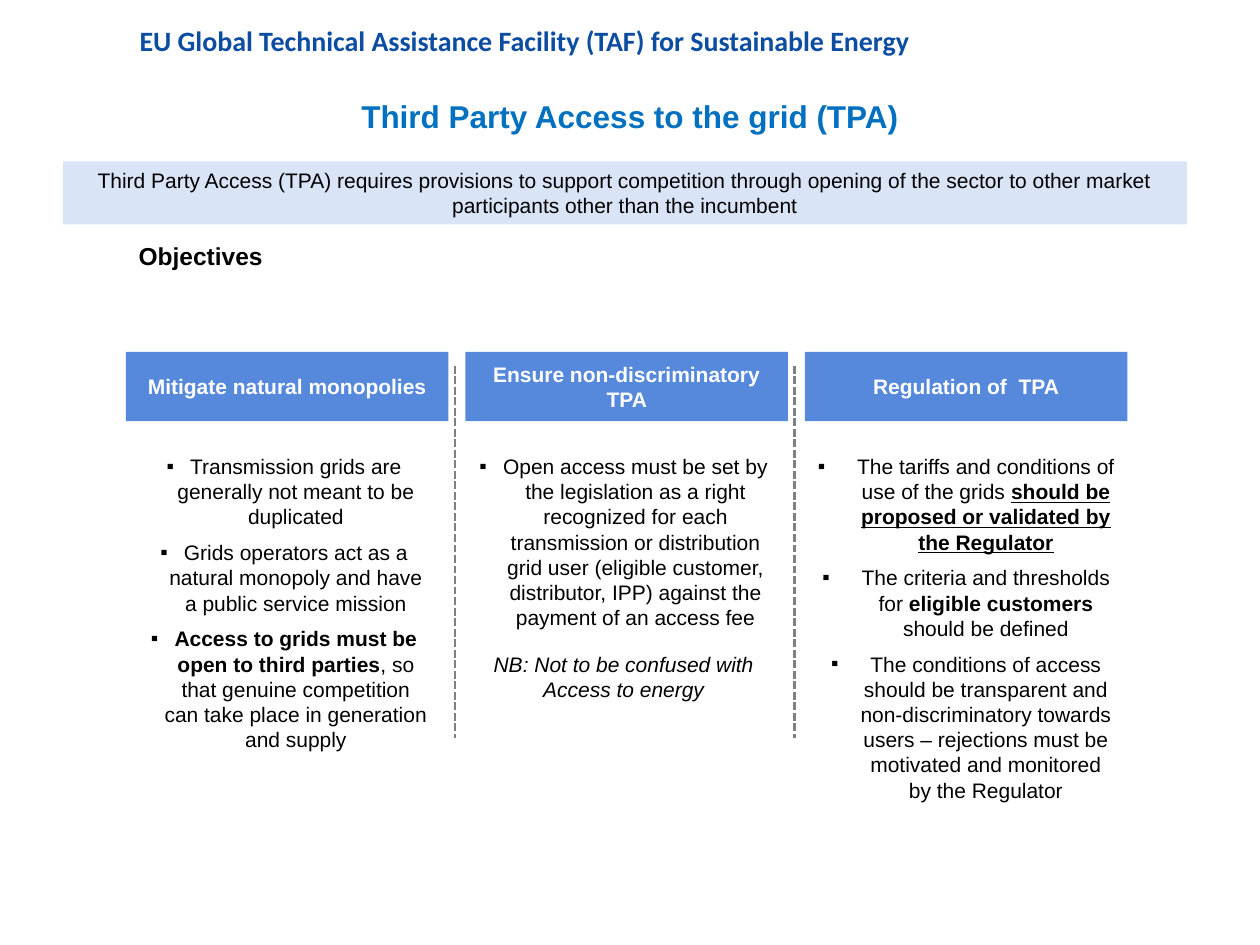
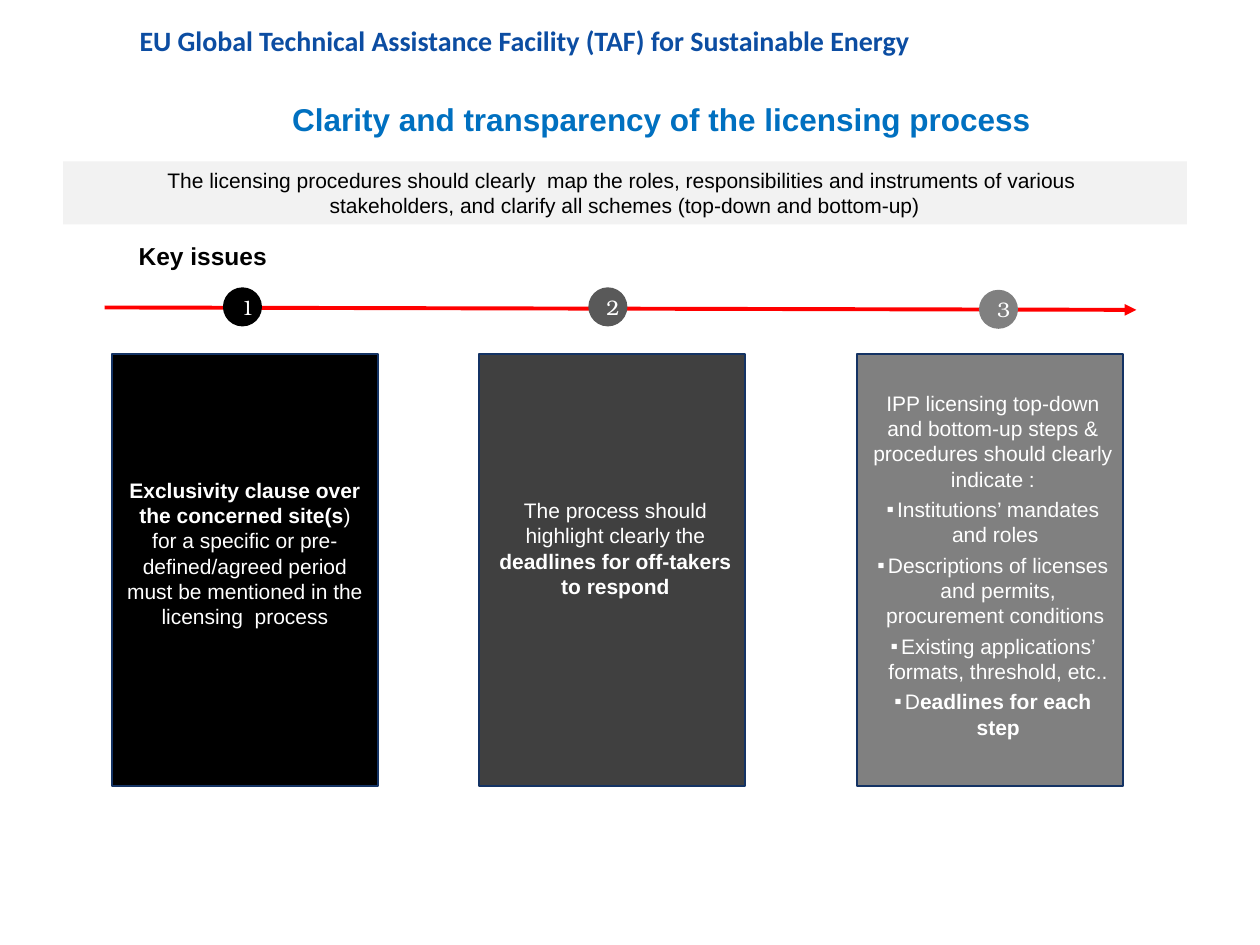
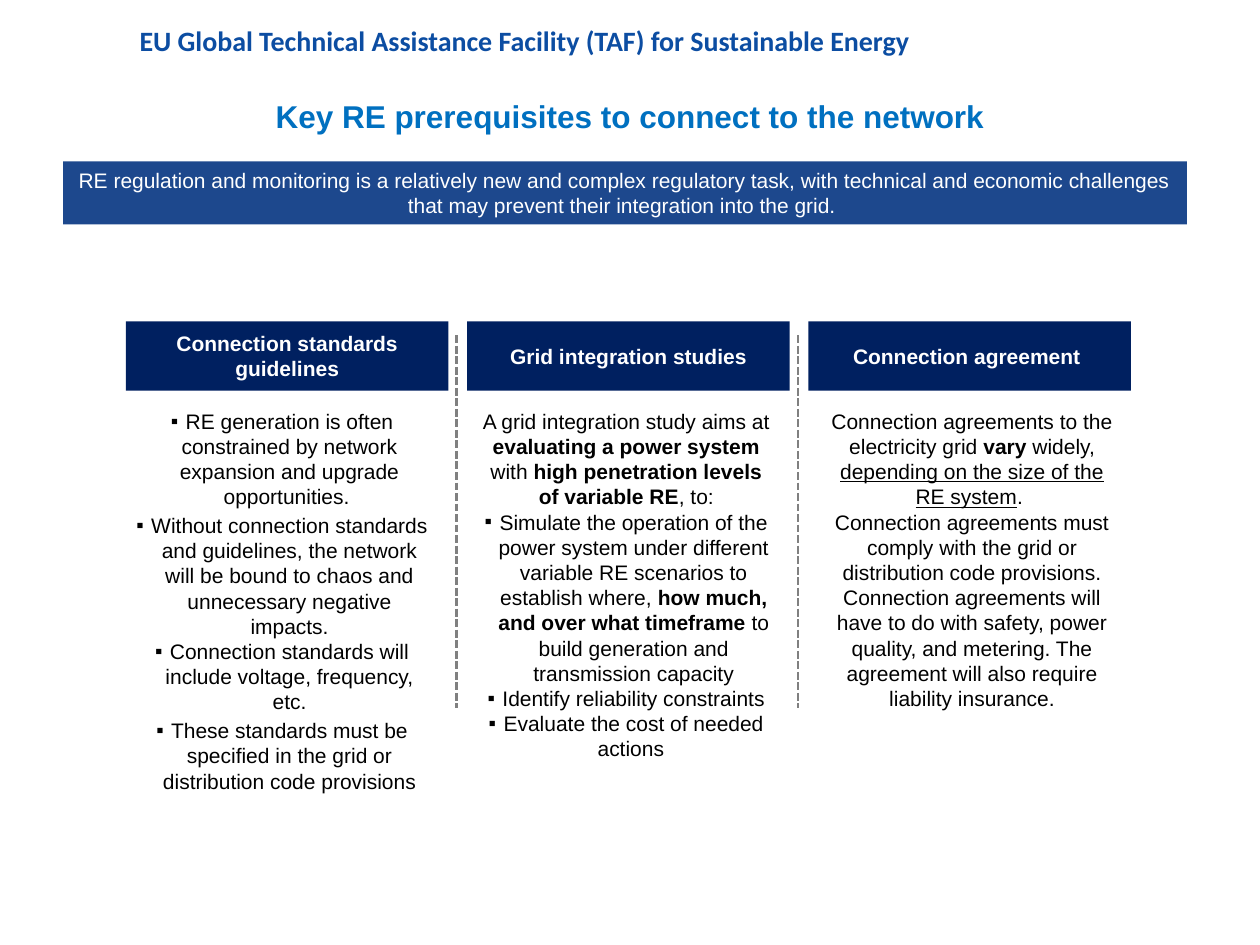
from dataclasses import dataclass
from typing import NamedTuple

from lxml.etree import SubElement
from pptx import Presentation
from pptx.dml.color import RGBColor
from pptx.enum.dml import MSO_LINE_DASH_STYLE as Dash
from pptx.enum.shapes import MSO_CONNECTOR, MSO_SHAPE
from pptx.enum.text import MSO_ANCHOR, MSO_AUTO_SIZE, PP_ALIGN
from pptx.oxml.ns import qn
from pptx.util import Pt

BLACK = RGBColor(0x00, 0x00, 0x00)
WHITE = RGBColor(0xFF, 0xFF, 0xFF)
RED = RGBColor(0xFF, 0x00, 0x00)
HEADER_BLUE = RGBColor(0x0C, 0x4D, 0xA2)
TITLE_BLUE = RGBColor(0x00, 0x70, 0xC0)
PALE_BLUE = RGBColor(0xD9, 0xE4, 0xF7)
MID_BLUE = RGBColor(0x56, 0x89, 0xDC)
BAND_BLUE = RGBColor(0x1D, 0x48, 0x8D)
NAVY = RGBColor(0x00, 0x20, 0x60)
OUTLINE_BLUE = RGBColor(0x14, 0x33, 0x64)
PALE_GRAY = RGBColor(0xF2, 0xF2, 0xF2)
GRAY = RGBColor(0x80, 0x80, 0x80)
DARK_GRAY = RGBColor(0x59, 0x59, 0x59)
CHARCOAL = RGBColor(0x40, 0x40, 0x40)

COMPARISON_LAYOUT = 4
HEADING_INDEX = 1
LIST_INDEXES = (2, 3, 4)
HEADER_TEXT = "EU Global Technical Assistance Facility (TAF) for Sustainable Energy"


class Box(NamedTuple):
    left: float
    top: float
    width: float
    height: float


class Run(NamedTuple):
    text: str
    format: dict = {}


class Style(NamedTuple):
    color: RGBColor = BLACK
    size: float = 12
    bold: bool = False
    name: str = "Arial"
    alignment: PP_ALIGN = PP_ALIGN.CENTER
    anchor: MSO_ANCHOR = MSO_ANCHOR.TOP


@dataclass
class Item:
    runs: tuple
    hanging: float = 0
    after: float = 0
    before: float = 0
    margin: float = 0


@dataclass
class Column:
    heading: str
    left: float
    width: float
    items: list


@dataclass
class Panel:
    number: str
    fill: RGBColor
    left: float
    circle_fill: RGBColor
    circle_left: float
    circle_top: float
    text_box: Box
    items: list


BODY = Style()
WHITE_BODY = Style(color=WHITE)
TITLE = Style(TITLE_BLUE, 18, True)
HEADING = Style(size=14, bold=True, alignment=PP_ALIGN.LEFT)
HEADER = Style(HEADER_BLUE, 16, True, "Calibri", PP_ALIGN.LEFT)
COLUMN_HEADING = Style(WHITE, bold=True, anchor=MSO_ANCHOR.MIDDLE)
NUMBER = Style(WHITE, name="TeX Gyre Bonum", anchor=MSO_ANCHOR.MIDDLE)

TITLE_BOX = Box(0, 52, 720, 29)
HEADER_BOX = Box(72.7, 10, 623.5, 24.5)
BAND_BOX = Box(36, 92.2, 642.2, 36)
HEADING_BOX = Box(72, 134.4, 126, 24.5)


def bold(text: str) -> Run:
    return Run(text, {"bold": True})


def item(*parts, **spacing) -> Item:
    return Item(tuple(Run(part) if isinstance(part, str) else part for part in parts), **spacing)


def bullets(hanging: float, after: float, *rows) -> list:
    return [item(*row, hanging=hanging, after=after) for row in rows]


def points(box: Box) -> tuple:
    return tuple(Pt(length) for length in box)


def set_bullet(paragraph, hanging: float, margin: float) -> None:
    properties = paragraph._p.get_or_add_pPr()
    properties.set("marL", str(Pt(hanging + margin)))
    properties.set("indent", str(Pt(-hanging)))
    if hanging:
        SubElement(properties, qn("a:buFont"), typeface="Arial")
        SubElement(properties, qn("a:buChar"), char="▪")
    else:
        SubElement(properties, qn("a:buNone"))


def write(shape, items: list, style: Style) -> None:
    frame = shape.text_frame
    frame_format = {"word_wrap": True, "auto_size": MSO_AUTO_SIZE.NONE, "vertical_anchor": style.anchor}
    for name, value in frame_format.items():
        setattr(frame, name, value)
    for position, entry in enumerate(items):
        paragraph = frame.add_paragraph() if position else frame.paragraphs[0]
        set_bullet(paragraph, entry.hanging, entry.margin)
        paragraph_format = {
            "alignment": style.alignment,
            "space_before": Pt(entry.before),
            "space_after": Pt(entry.after),
        }
        for name, value in paragraph_format.items():
            setattr(paragraph, name, value)
        for part in entry.runs:
            run = paragraph.add_run()
            run.text = part.text
            font_format = {"name": style.name, "size": Pt(style.size), "bold": style.bold, **part.format}
            for name, value in font_format.items():
                setattr(run.font, name, value)
            run.font.color.rgb = style.color


def fill_placeholder(shape, box: Box, items: list, style: Style) -> None:
    shape.element.getparent().append(shape.element)
    for name, value in zip(box._fields, points(box)):
        setattr(shape, name, value)
    write(shape, items, style)


def add_filled(slide, kind, box: Box, fill: RGBColor, outline: RGBColor | None = None):
    shape = slide.shapes.add_shape(kind, *points(box))
    shape.shadow.inherit = False
    shape.fill.solid()
    shape.fill.fore_color.rgb = fill
    if outline is None:
        shape.line.fill.background()
    else:
        shape.line.color.rgb = outline
        shape.line.width = Pt(1.25)
    return shape


def add_line(slide, start: tuple, end: tuple, color: RGBColor, width: float,
             dash: Dash | None = None, arrow: bool = False) -> None:
    connector = slide.shapes.add_connector(
        MSO_CONNECTOR.STRAIGHT, *(Pt(value) for value in start + end))
    connector.line.color.rgb = color
    connector.line.width = Pt(width)
    if dash is not None:
        connector.line.dash_style = dash
    properties = connector.element.spPr
    if arrow:
        SubElement(properties.find(qn("a:ln")), qn("a:tailEnd"), type="triangle")
    SubElement(properties, qn("a:effectLst"))


def start_slide(presentation, title: str, band_fill: RGBColor, band_lines: list,
                band_style: Style = BODY, heading: str = "", title_margin: float = 0,
                title_top: float = TITLE_BOX.top):
    slide = presentation.slides.add_slide(presentation.slide_layouts[COMPARISON_LAYOUT])
    write(slide.shapes.add_textbox(*points(HEADER_BOX)), [item(HEADER_TEXT)], HEADER)
    fill_placeholder(slide.shapes.title, TITLE_BOX._replace(top=title_top),
                     [item(title, margin=title_margin)], TITLE)
    band = add_filled(slide, MSO_SHAPE.RECTANGLE, BAND_BOX, band_fill)
    write(band, [item(line) for line in band_lines], band_style)
    heading_shape = slide.placeholders[HEADING_INDEX]
    if heading:
        fill_placeholder(heading_shape, HEADING_BOX, [item(heading)], HEADING)
    else:
        heading_shape.element.getparent().remove(heading_shape.element)
    return slide


def add_columns(slide, columns: list, top: float, step: float, fill: RGBColor,
                text_top: float, text_height: float) -> None:
    for position, (column, index) in enumerate(zip(columns, LIST_INDEXES)):
        left = 72 + position * step
        heading = add_filled(slide, MSO_SHAPE.RECTANGLE, Box(left, top, 184.3, 39.6), fill)
        write(heading, [item(column.heading)], COLUMN_HEADING)
        fill_placeholder(slide.placeholders[index],
                         Box(column.left, text_top, column.width, text_height), column.items, BODY)
        if position:
            add_line(slide, (left - 6, top + 8), (left - 6, top + 221), GRAY, 1.5, Dash.SQUARE_DOT)


def add_panels(slide, panels: list) -> None:
    add_line(slide, (59.8, 175.7), (649.4, 177.1), RED, 2.25, arrow=True)
    for panel, index in zip(panels, LIST_INDEXES):
        circle = add_filled(slide, MSO_SHAPE.OVAL,
                            Box(panel.circle_left, panel.circle_top, 22.3, 22.3), panel.circle_fill)
        write(circle, [item(panel.number)], NUMBER)
        add_filled(slide, MSO_SHAPE.RECTANGLE, Box(panel.left, 202.3, 152, 247), panel.fill, OUTLINE_BLUE)
        fill_placeholder(slide.placeholders[index], panel.text_box, panel.items, WHITE_BODY)


def build_access_slide(presentation) -> None:
    slide = start_slide(
        presentation, "Third Party Access to the grid (TPA)", PALE_BLUE,
        ["Third Party Access (TPA) requires provisions to support competition through opening of "
         "the sector to other market participants other than the incumbent"],
        heading="Objectives")
    columns = [
        Column("Mitigate natural monopolies", 72, 180.7, bullets(
            13.5, 6,
            ("Transmission grids are generally not meant to be duplicated",),
            ("Grids operators act as a natural monopoly and have a public service mission",),
            (bold("Access to grids must be open to third parties"),
             ", so that genuine competition can take place in generation and supply"))),
        Column("Ensure non-discriminatory TPA", 265, 182.9, [
            item("Open access must be set by the legislation as a right recognized for each "
                 "transmission or distribution grid user (eligible customer, distributor, IPP) "
                 "against the payment of an access fee", hanging=13.5, after=6),
            item(Run("NB: Not to be confused with Access to energy", {"italic": True}),
                 before=6, after=6)]),
        Column("Regulation of  TPA", 460, 184.3, bullets(
            22.5, 6,
            ("The tariffs and conditions of use of the grids ",
             Run("should be proposed or validated by the Regulator", {"bold": True, "underline": True})),
            ("The criteria and thresholds for ", bold("eligible customers "), "should be defined"),
            ("The conditions of access should be transparent and non-discriminatory towards users "
             "– rejections must be motivated and monitored by the Regulator",))),
    ]
    add_columns(slide, columns, 201, 194, MID_BLUE, 255.6, 208)


def build_licensing_slide(presentation) -> None:
    slide = start_slide(
        presentation, "Clarity and transparency of the licensing process", PALE_GRAY,
        ["The licensing procedures should clearly  map the roles, responsibilities and instruments of various ",
         "stakeholders, and clarify all schemes (top-down and bottom-up)"],
        heading="Key issues", title_margin=36, title_top=53.3)
    panels = [
        Panel("1", BLACK, 64, BLACK, 127.4, 164.2, Box(64, 269.3, 152, 94.3), [
            item(bold("Exclusivity clause over the concerned site(s"),
                 ") for a specific or pre-defined/agreed period must be mentioned in the "
                 "licensing  process")]),
        Panel("2", CHARCOAL, 273.6, DARK_GRAY, 336.2, 164.2, Box(277.2, 280.8, 149, 65.5), [
            item("The process should highlight clearly the ",
                 bold("deadlines for off-takers to respond"))]),
        Panel("3", GRAY, 489.6, GRAY, 559.4, 165.6, Box(491.8, 219.6, 151.2, 208), [
            item("IPP licensing top-down and bottom-up steps & procedures should clearly indicate :",
                 after=3),
            *bullets(
                6, 3,
                ("Institutions’ mandates and roles ",),
                ("Descriptions of licenses and permits, procurement conditions ",),
                ("Existing applications’ formats, threshold, etc..",),
                ("D", bold("eadlines for each step")))]),
    ]
    add_panels(slide, panels)


def build_connection_slide(presentation) -> None:
    slide = start_slide(
        presentation, "Key RE prerequisites to connect to the network", BAND_BLUE,
        ["RE regulation and monitoring is a relatively new and complex regulatory task, with technical "
         "and economic challenges that may prevent their integration into the grid. "],
        band_style=WHITE_BODY)
    standards = bullets(
        8.5, 2,
        ("RE generation is often constrained by network expansion and upgrade opportunities. ",),
        ("Without connection standards and guidelines, the network will be bound to chaos and "
         "unnecessary negative impacts.",),
        ("Connection standards will include voltage, frequency, etc.",),
        ("These standards must be specified in the grid or distribution code provisions",))
    standards[1].after = 0
    columns = [
        Column("Connection standards guidelines", 69.8, 182.9, standards),
        Column("Grid integration studies", 268.6, 178.6, [
            item("A grid integration study aims at ", bold("evaluating a power system "), "with ",
                 bold("high penetration levels of variable RE"), ", to:"),
            *bullets(
                8.5, 0,
                ("Simulate the operation of the power system under different variable RE scenarios "
                 "to establish where, ", bold("how much, and over what timeframe "),
                 "to build generation and transmission capacity"),
                ("Identify reliability constraints",),
                ("Evaluate the cost of needed actions ",))]),
        Column("Connection agreement ", 464.4, 182.2, [
            item("Connection agreements to the electricity grid ", bold("vary"), " widely, ",
                 Run("depending on the size of the RE system", {"underline": True}), ". "),
            item("Connection agreements must comply with the grid or distribution code provisions."),
            item("Connection agreements will have to do with safety, power quality, and metering. "
                 "The agreement will also require liability insurance.")]),
    ]
    add_columns(slide, columns, 183.6, 195, NAVY, 229.7, 229.7)


def main() -> None:
    presentation = Presentation()
    presentation.slide_width = Pt(720)
    presentation.slide_height = Pt(540)
    for build in (build_access_slide, build_licensing_slide, build_connection_slide):
        build(presentation)
    presentation.save("out.pptx")


if __name__ == "__main__":
    main()
